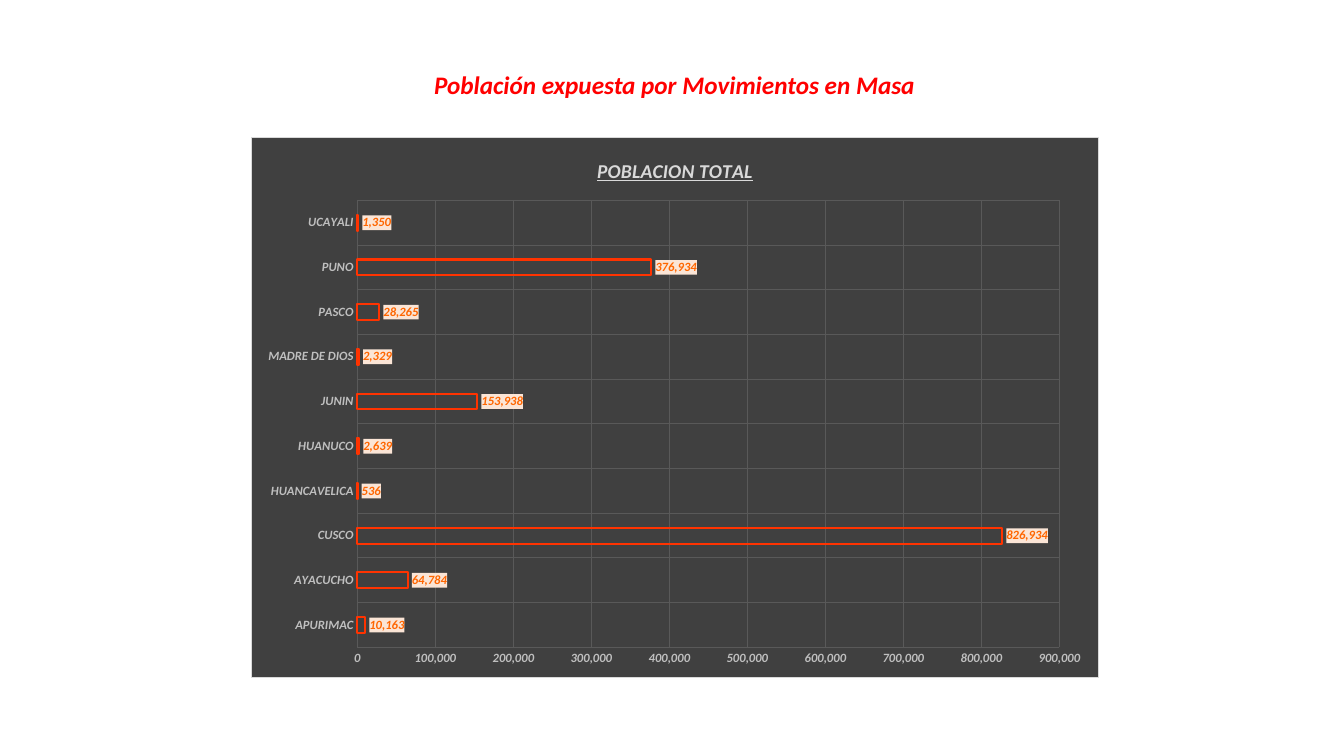
from lxml import etree
from pptx import Presentation
from pptx.chart.data import CategoryChartData
from pptx.dml.color import RGBColor
from pptx.enum.chart import XL_CHART_TYPE as Chart, XL_LABEL_POSITION as LabelPos
from pptx.enum.chart import XL_TICK_MARK as Tick
from pptx.enum.text import MSO_ANCHOR as Anchor, PP_ALIGN as Align
from pptx.oxml import parse_xml
from pptx.oxml.ns import nsdecls, qn
from pptx.util import Pt

# Content
TITLE = "Población expuesta por Movimientos en Masa"
CHART_TITLE = "POBLACION TOTAL"
POPULATION = {
    "APURIMAC": 10163,
    "AYACUCHO": 64784,
    "CUSCO": 826934,
    "HUANCAVELICA": 536,
    "HUANUCO": 2639,
    "JUNIN": 153938,
    "MADRE DE DIOS": 2329,
    "PASCO": 28265,
    "PUNO": 376934,
    "UCAYALI": 1350,
}
NUMBER_FORMAT = "#,##0"
FONT = "Calibri"

# Colours
RED = RGBColor(0xFF, 0x00, 0x00)
BAR_RED = RGBColor(0xFF, 0x33, 0x00)
ORANGE = RGBColor(0xFF, 0x66, 0x00)
PEACH = RGBColor(0xFB, 0xE5, 0xD6)
DARK = RGBColor(0x40, 0x40, 0x40)
GRID = RGBColor(0x59, 0x59, 0x59)
SILVER = RGBColor(0xBF, 0xBF, 0xBF)
LIGHT = RGBColor(0xD9, 0xD9, 0xD9)

# Geometry in px: left, top, width, height
SLIDE = (1344, 756)
TITLE_BOX = (421, 64, 507, 40)
CHART_BOX = (251, 137, 848, 541)
PLOT_BOX = (357, 200, 703, 448)
EMU_PER_PX = 914400 / 100.8


def emu(*lengths):
    return [round(n * EMU_PER_PX) for n in lengths]


def style(font, size, color):
    font.name, font.size = FONT, Pt(size)
    font.bold = font.italic = True
    font.color.rgb = color


def solid(color, line=""):
    return parse_xml(f'<c:spPr {nsdecls("c", "a")}><a:solidFill><a:srgbClr val="{color}"/>'
                     f'</a:solidFill>{line}</c:spPr>')


def place_plot(plot_area):
    for old in plot_area.findall(qn("c:layout")):
        plot_area.remove(old)
    left, top, width, height = CHART_BOX
    x, y, w, h = PLOT_BOX
    layout = etree.Element(qn("c:layout"))
    manual = etree.SubElement(layout, qn("c:manualLayout"))
    for tag, val in (("layoutTarget", "inner"), ("xMode", "edge"), ("yMode", "edge"),
                     ("x", (x - left) / width), ("y", (y - top) / height),
                     ("w", w / width), ("h", h / height)):
        etree.SubElement(manual, qn(f"c:{tag}")).set("val", str(val))
    plot_area.insert(0, layout)


prs = Presentation()
prs.slide_width, prs.slide_height = emu(*SLIDE)
slide = prs.slides.add_slide(prs.slide_layouts[5])

# Slide title
title = slide.shapes.title
title.left, title.top, title.width, title.height = emu(*TITLE_BOX)
tf = title.text_frame
tf.text = TITLE
tf.word_wrap = False
tf.vertical_anchor = Anchor.MIDDLE
p = tf.paragraphs[0]
p.alignment = Align.CENTER
style(p.runs[0].font, 18, RED)

# Bar chart
data = CategoryChartData(number_format=NUMBER_FORMAT)
data.categories = list(POPULATION)
data.add_series(CHART_TITLE, list(POPULATION.values()))
chart = slide.shapes.add_chart(Chart.BAR_CLUSTERED, *emu(*CHART_BOX), data).chart
chart.has_legend = False
chart.font.name, chart.font.size = FONT, Pt(10)
chart.has_title = True
chart.chart_title.include_in_layout = False
p = chart.chart_title.text_frame.paragraphs[0]
p.text = CHART_TITLE
style(p.runs[0].font, 14, LIGHT)
p.runs[0].font.underline = True

# Chart background and plot position
border = f'<a:ln w="9525"><a:solidFill><a:srgbClr val="{LIGHT}"/></a:solidFill></a:ln>'
space = chart.element if hasattr(chart, "element") else chart._chartSpace
space.find(qn("c:chart")).addnext(solid(DARK, border))
place_plot(space.find(qn("c:chart")).find(qn("c:plotArea")))

# Axes
for axis in (chart.category_axis, chart.value_axis):
    axis.major_tick_mark = axis.minor_tick_mark = Tick.NONE
    axis.has_major_gridlines = True
    grid = axis.major_gridlines.format.line
    grid.color.rgb, grid.width = GRID, Pt(0.75)
    axis.format.line.fill.background()
    style(axis.tick_labels.font, 9, SILVER)
value_axis = chart.value_axis
value_axis.minimum_scale, value_axis.maximum_scale = 0, 900000
value_axis.major_unit = 100000
value_axis.tick_labels.number_format = NUMBER_FORMAT
value_axis.tick_labels.number_format_is_linked = False

# Outlined bars with value labels
plot = chart.plots[0]
plot.gap_width, plot.overlap, plot.vary_by_categories = 182, -50, False
series = plot.series[0]
series.format.fill.background()
series.format.line.color.rgb = BAR_RED
series.format.line.width = Pt(1.5)
labels = series.data_labels
labels.show_value = True
labels.position = LabelPos.OUTSIDE_END
labels.number_format = NUMBER_FORMAT
labels.number_format_is_linked = False
style(labels.font, 9, ORANGE)
labels._element.find(qn("c:txPr")).addprevious(solid(PEACH))

prs.save("out.pptx")
